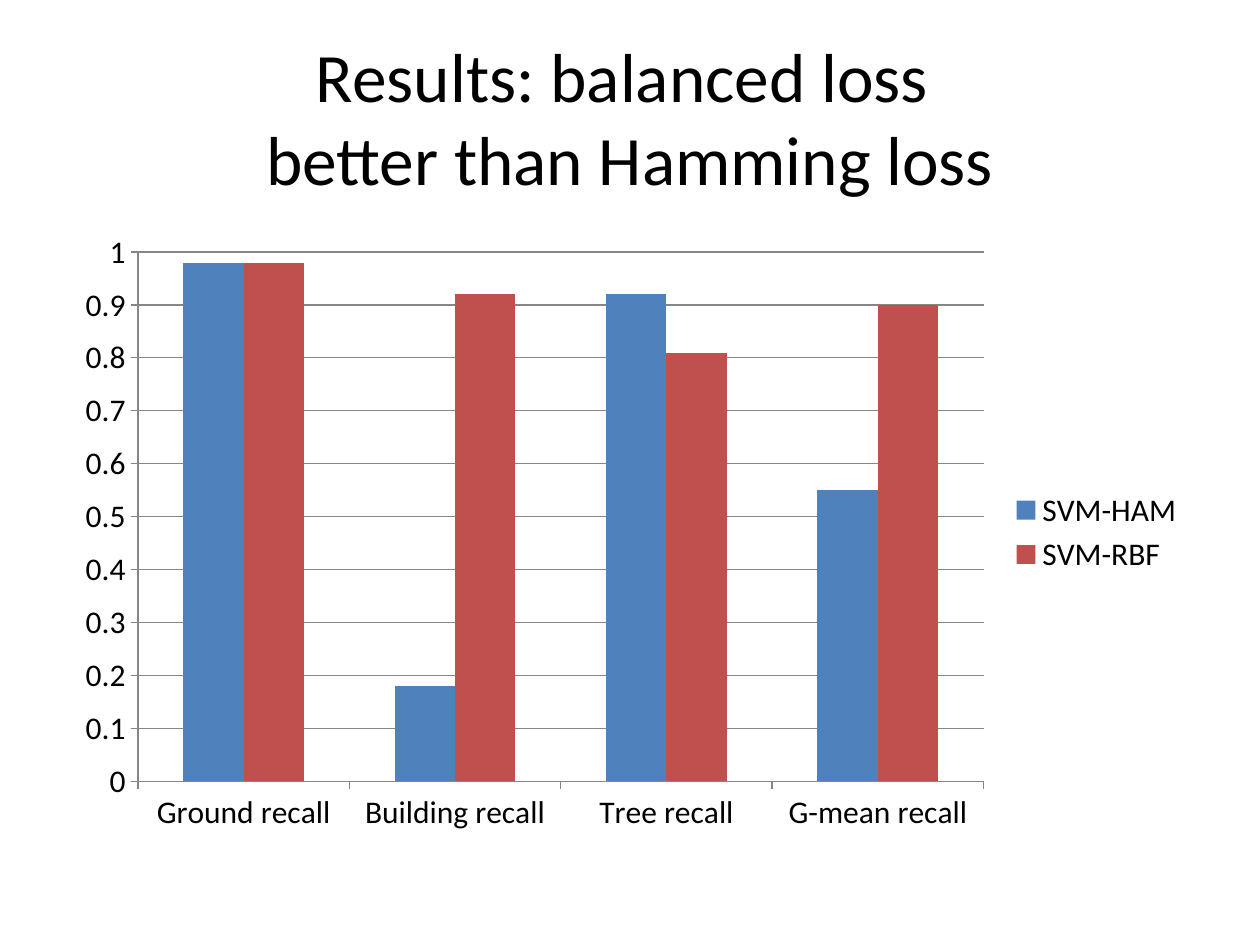
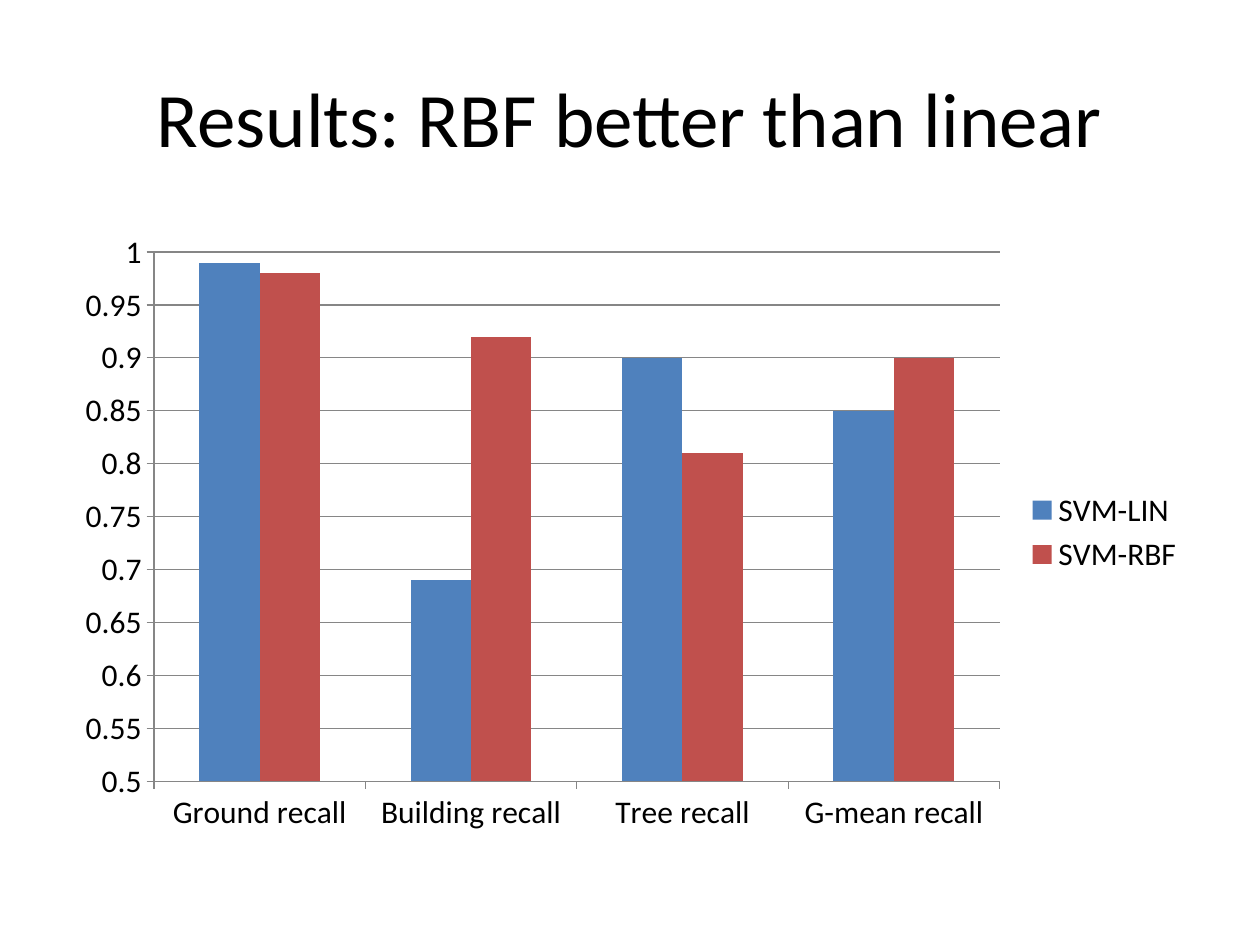
from pptx import Presentation
from pptx.chart.data import CategoryChartData as ChartData
from pptx.dml.color import RGBColor
from pptx.enum.chart import XL_CHART_TYPE as ChartType
from pptx.enum.chart import XL_LEGEND_POSITION as LegendPosition
from pptx.enum.chart import XL_TICK_MARK as TickMark
from pptx.enum.text import MSO_ANCHOR as Anchor
from pptx.enum.text import MSO_AUTO_SIZE as AutoSize
from pptx.enum.text import PP_ALIGN as Align
from pptx.util import Pt

FONT = "Calibri"
BLACK, GRID, WHITE = "000000", "868686", "FFFFFF"
SERIES_COLORS = ["4F81BD", "C0504D"]
PAGE_SIZE = (720, 540)
TITLE_BOX = (36, 21.6, 648, 90)
CHART_BOX = (36, 126, 648, 356.4)
RECALLS = ["Ground recall", "Building recall", "Tree recall", "G-mean recall"]
RBF_RECALLS = [0.98, 0.92, 0.81, 0.9]


def color(value):
    """Turn a hex string into a colour."""
    return RGBColor.from_string(value)


def style_font(font, size, fill=BLACK):
    """Apply the shared typeface with a size and colour."""
    font.name = FONT
    font.size = Pt(size)
    font.color.rgb = color(fill)


def write_text(frame, text, size=44, align=Align.CENTER, anchor=Anchor.MIDDLE):
    """Fill a text frame with one formatted paragraph."""
    frame.auto_size = AutoSize.NONE
    frame.word_wrap = True
    frame.vertical_anchor = anchor
    para = frame.paragraphs[0]
    para.text = text
    para.alignment = align
    for span in para.runs:
        style_font(span.font, size)


def place_title(page, box, text, size):
    """Move the title placeholder into its box and write it."""
    title = page.shapes.title
    title.left, title.top, title.width, title.height = map(Pt, box)
    write_text(title.text_frame, text, size=size)


def style_axis(axis):
    """Give an axis its grey line and outward ticks."""
    axis.major_tick_mark = TickMark.OUTSIDE
    axis.minor_tick_mark = TickMark.NONE
    axis.format.line.color.rgb = color(GRID)
    axis.format.line.width = Pt(0.75)


def add_recall_chart(page, box, series, minimum, step):
    """Draw clustered recall columns in the box."""
    data = ChartData(number_format="General")
    data.categories = RECALLS
    for name, values in series.items():
        data.add_series(name, values)
    chart = page.shapes.add_chart(
        ChartType.COLUMN_CLUSTERED, *map(Pt, box), data).chart
    style_font(chart.font, 18)
    chart.has_title = False
    chart.has_legend = True
    chart.legend.position = LegendPosition.RIGHT
    chart.legend.include_in_layout = False

    plot = chart.plots[0]
    plot.vary_by_categories = False
    plot.gap_width = 150
    plot.overlap = 0
    for bars, fill in zip(plot.series, SERIES_COLORS):
        bars.format.fill.solid()
        bars.format.fill.fore_color.rgb = color(fill)

    style_axis(chart.category_axis)
    scale = chart.value_axis
    style_axis(scale)
    scale.minimum_scale, scale.maximum_scale = minimum, 1
    scale.major_unit = step
    scale.has_major_gridlines = True
    scale.major_gridlines.format.line.color.rgb = color(GRID)
    scale.major_gridlines.format.line.width = Pt(0.75)


def add_results_page(deck, title, title_size, rival, rival_recalls, minimum, step):
    """Add a page comparing a rival classifier with SVM-RBF."""
    page = deck.slides.add_slide(deck.slide_layouts[5])
    page.background.fill.solid()
    page.background.fill.fore_color.rgb = color(WHITE)
    place_title(page, TITLE_BOX, title, title_size)
    series = {rival: rival_recalls, "SVM-RBF": RBF_RECALLS}
    add_recall_chart(page, CHART_BOX, series, minimum, step)


def main():
    """Build and save the deck."""
    deck = Presentation()
    deck.slide_width, deck.slide_height = map(Pt, PAGE_SIZE)
    add_results_page(deck, "Results: balanced loss \vbetter than Hamming loss", 39.6,
                     "SVM-HAM", [0.98, 0.18, 0.92, 0.55], minimum=0, step=0.1)
    add_results_page(deck, "Results: RBF better than linear", 44,
                     "SVM-LIN", [0.99, 0.69, 0.9, 0.85], minimum=0.5, step=0.05)
    deck.save("out.pptx")


if __name__ == "__main__":
    main()
